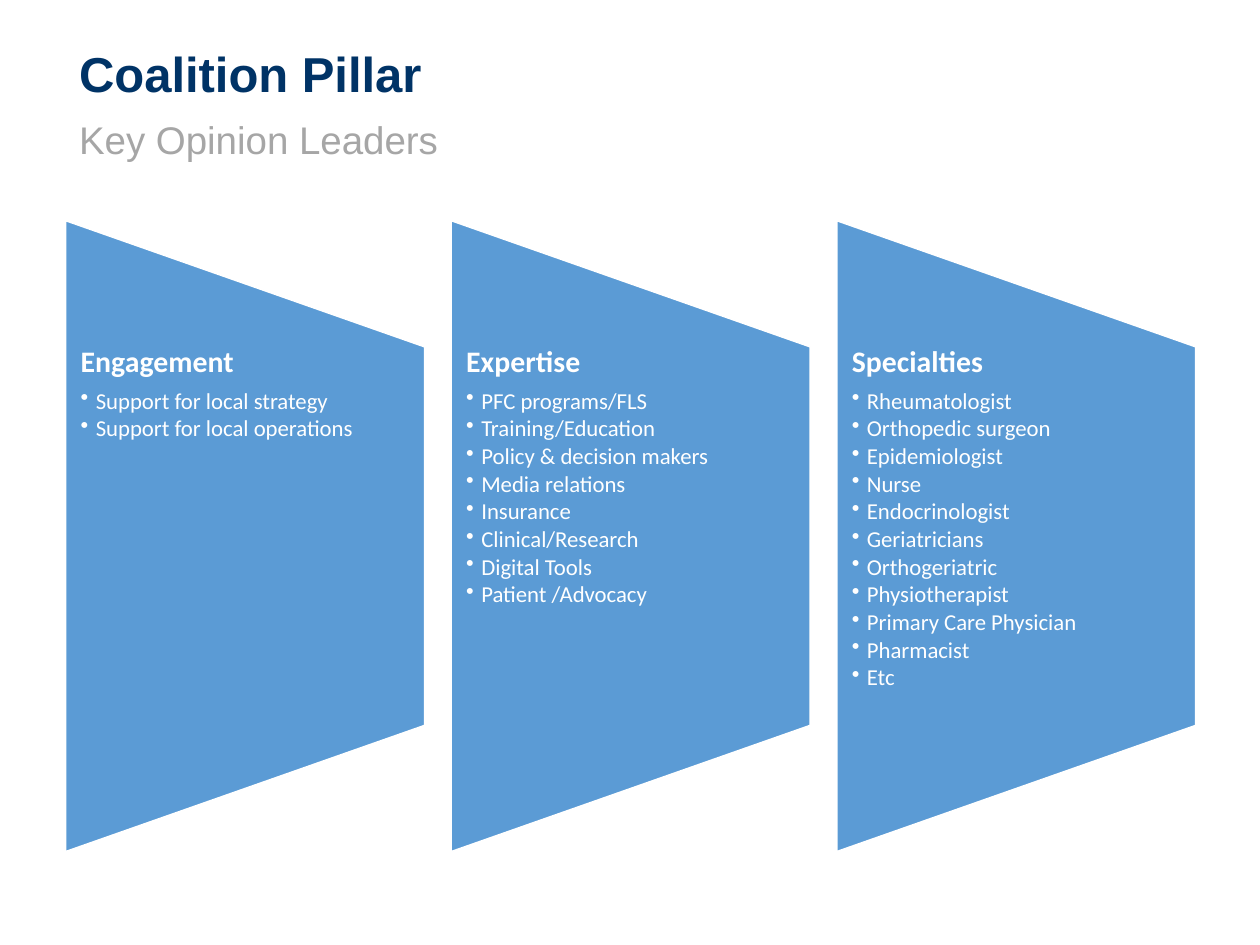
from lxml.etree import SubElement
from pptx import Presentation
from pptx.dml.color import RGBColor
from pptx.enum.shapes import MSO_SHAPE as Shape
from pptx.enum.text import MSO_ANCHOR as Anchor
from pptx.oxml.ns import qn
from pptx.util import Inches, Pt

COLORS = {"navy": "003366", "gray": "A6A6A6", "blue": "5B9BD5", "white": "FFFFFF"}

PILLARS = {
    "Engagement": ["Support for local strategy", "Support for local operations"],
    "Expertise": [
        "PFC programs/FLS", "Training/Education", "Policy & decision makers",
        "Media relations", "Insurance", "Clinical/Research", "Digital Tools",
        "Patient /Advocacy",
    ],
    "Specialties": [
        "Rheumatologist", "Orthopedic surgeon", "Epidemiologist", "Nurse",
        "Endocrinologist", "Geriatricians", "Orthogeriatric", "Physiotherapist",
        "Primary Care Physician", "Pharmacist", "Etc",
    ],
}

LEFT, PITCH, WIDTH = 0.52, 3.06, 2.85
TOP, HEIGHT = 1.75, 5.01

deck = Presentation()
deck.slide_width, deck.slide_height = Inches(10), Inches(7.5)
slide = deck.slides.add_slide(deck.slide_layouts[6])


def add_frame(left, top, width, height, anchor=Anchor.TOP):
    frame = slide.shapes.add_textbox(*map(Inches, (left, top, width, height))).text_frame
    frame.word_wrap = True
    frame.vertical_anchor = anchor
    return frame


def write(paragraph, words, font, size, color, bold=False, after=0):
    paragraph.text = words
    paragraph.line_spacing = 0.9
    paragraph.space_after = Pt(after)
    paragraph.font.name = font
    paragraph.font.size = Pt(size)
    paragraph.font.bold = bold
    paragraph.font.color.rgb = RGBColor.from_string(COLORS[color])


title = add_frame(0.53, 0.33, 8.96, 0.54, Anchor.BOTTOM)
write(title.paragraphs[0], "Coalition Pillar", "Arial", 28, "navy", bold=True)
subtitle = add_frame(0.53, 0.91, 8.96, 0.55)
write(subtitle.paragraphs[0], "Key Opinion Leaders", "Arial", 22, "gray")

for column, (heading, points) in enumerate(PILLARS.items()):
    left = LEFT + column * PITCH
    turn = (HEIGHT - WIDTH) / 2
    pillar = slide.shapes.add_shape(
        Shape.FLOWCHART_MANUAL_OPERATION,
        *map(Inches, (left - turn, TOP + turn, HEIGHT, WIDTH)))
    pillar.rotation = 270
    pillar.shadow.inherit = False
    pillar.fill.solid()
    pillar.fill.fore_color.rgb = RGBColor.from_string(COLORS["blue"])
    pillar.line.color.rgb = RGBColor.from_string(COLORS["white"])
    pillar.line.width = Pt(1)

    content = add_frame(left, TOP + HEIGHT / 5, WIDTH, HEIGHT * 3 / 5)
    content.margin_left = content.margin_right = Inches(0.12)
    content.margin_top = content.margin_bottom = 0
    write(content.paragraphs[0], heading, "Calibri", 17, "white", bold=True, after=6)
    for point in points:
        item = content.add_paragraph()
        item.level = 1
        properties = item._p.get_or_add_pPr()
        properties.set("marL", str(Inches(0.12)))
        properties.set("indent", str(-Inches(0.12)))
        SubElement(properties, qn("a:buChar"), char="•")
        write(item, point, "Calibri", 13, "white", after=1.75)

deck.save("out.pptx")
